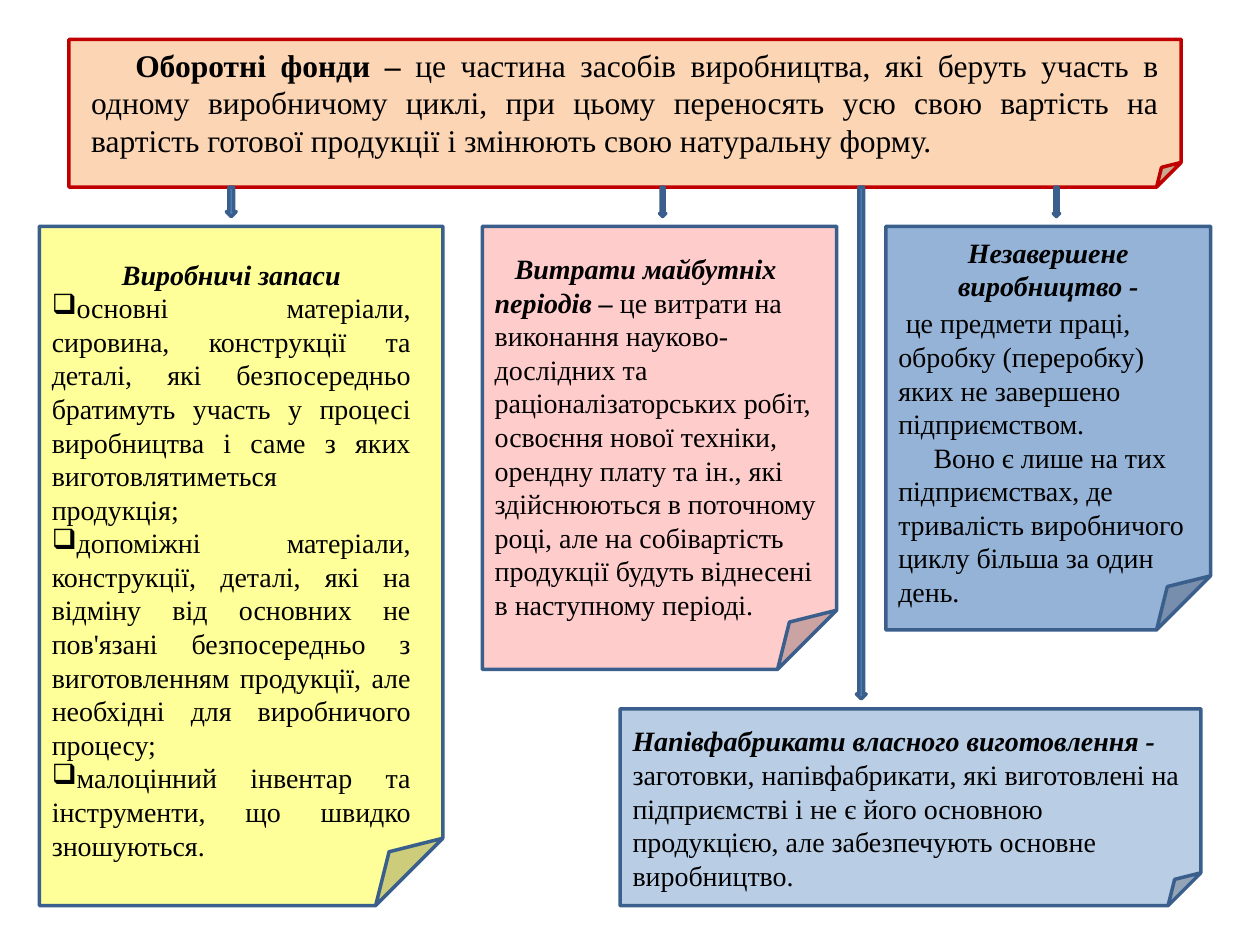
from dataclasses import dataclass

from lxml import etree
from pptx import Presentation
from pptx.dml.color import RGBColor
from pptx.enum import shapes, text
from pptx.oxml.ns import qn
from pptx.util import Emu, Inches, Pt

COLUMNS, ROWS = 128, 96
WIDTH, HEIGHT = Inches(10), Inches(7.5)
FONT = "Times New Roman"
BLUE_EDGE, RED_EDGE = "3A5F8C", "C00000"
LEFT, CENTER, JUSTIFY = text.PP_ALIGN.LEFT, text.PP_ALIGN.CENTER, text.PP_ALIGN.JUSTIFY


@dataclass(frozen=True)
class Area:
    column: float
    row: float
    columns: float
    rows: float

    def box(self) -> tuple[Emu, Emu, Emu, Emu]:
        across, down = WIDTH / COLUMNS, HEIGHT / ROWS
        return (Emu(round(self.column * across)), Emu(round(self.row * down)),
                Emu(round(self.columns * across)), Emu(round(self.rows * down)))


@dataclass(frozen=True)
class Passage:
    term: str = ""
    body: str = ""
    align: text.PP_ALIGN = LEFT
    indent: float = 0
    before: float = 0
    bullet: str = ""
    size: float = 16
    italic: bool = True


@dataclass(frozen=True)
class Note:
    area: Area
    fill: str
    edge: str = BLUE_EDGE
    top: float = 0.05
    passages: tuple[Passage, ...] = ()


@dataclass(frozen=True)
class Caption:
    area: Area
    passages: tuple[Passage, ...]


def color(value: str) -> RGBColor:
    return RGBColor.from_string(value)


def add_run(paragraph, words: str, size: float, bold: bool, italic: bool) -> None:
    run = paragraph.add_run()
    run.text = words
    run.font.name = FONT
    run.font.size = Pt(size)
    run.font.bold = bold
    run.font.italic = italic
    run.font.color.rgb = color("000000")


def write(frame, passages: tuple[Passage, ...], top: float = 0.05) -> None:
    frame.word_wrap = True
    frame.vertical_anchor = text.MSO_ANCHOR.TOP
    frame.margin_top = Inches(top)
    for index, passage in enumerate(passages):
        paragraph = frame.add_paragraph() if index else frame.paragraphs[0]
        paragraph.alignment = passage.align
        paragraph.space_before = Pt(passage.before)
        properties = paragraph._p.get_or_add_pPr()
        properties.set("marL", "0")
        properties.set("indent", str(Inches(passage.indent)))
        if passage.bullet:
            etree.SubElement(properties, qn("a:buChar")).set("char", passage.bullet)
        if passage.term:
            add_run(paragraph, passage.term, passage.size, True, passage.italic)
        if passage.body:
            add_run(paragraph, passage.body, passage.size, False, False)


def add_outlined(slide, kind: shapes.MSO_SHAPE, area: Area, fill: str, edge: str):
    shape = slide.shapes.add_shape(kind, *area.box())
    shape.shadow.inherit = False
    shape.fill.solid()
    shape.fill.fore_color.rgb = color(fill)
    shape.line.color.rgb = color(edge)
    shape.line.width = Pt(2)
    return shape


def add_note(slide, note: Note) -> None:
    shape = add_outlined(slide, shapes.MSO_SHAPE.FOLDED_CORNER, note.area, note.fill, note.edge)
    if note.passages:
        write(shape.text_frame, note.passages, note.top)


def add_caption(slide, caption: Caption) -> None:
    write(slide.shapes.add_textbox(*caption.area.box()).text_frame, caption.passages)


def add_arrow(slide, area: Area) -> None:
    add_outlined(slide, shapes.MSO_SHAPE.DOWN_ARROW, area, "4F81BD", BLUE_EDGE)


NOTES = (
    Note(Area(4, 23, 41, 69), "FFFF99"),
    Note(Area(7, 4, 113, 15), "FCD5B5", RED_EDGE),
    Note(Area(63, 72, 59, 20), "B9CDE5", top=0.12, passages=(
        Passage("Напівфабрикати власного виготовлення - ",
                "заготовки, напівфабрикати, які виготовлені на підприємстві і не є його "
                "основною продукцією, але забезпечують основне виробництво."),
    )),
    Note(Area(49, 23, 36, 45), "FFCCCC", top=0.2, passages=(
        Passage("Витрати майбутніх періодів – ",
                "це витрати на виконання науково-дослідних та раціоналізаторських робіт, "
                "освоєння нової техніки, орендну плату та ін., які здійснюються в поточному "
                "році, але на собівартість продукції будуть віднесені в наступному періоді.",
                indent=0.16),
    )),
    Note(Area(90, 23, 33, 41), "95B3D7", top=0.07, passages=(
        Passage("Незавершене виробництво -", align=CENTER),
        Passage(body="це предмети праці, обробку (переробку) яких не завершено підприємством.",
                indent=0.06, before=2),
        Passage(body="Воно є лише на тих підприємствах, де тривалість виробничого циклу "
                     "більша за один день.", indent=0.28),
    )),
)

SUPPLIES = (
    "основні матеріали, сировина, конструкції та деталі, які безпосередньо братимуть "
    "участь у процесі виробництва і саме з яких виготовлятиметься продукція;",
    "допоміжні матеріали, конструкції, деталі, які на відміну від основних не пов'язані "
    "безпосередньо з виготовленням продукції, але необхідні для виробничого процесу;",
    "малоцінний інвентар та інструменти, що швидко зношуються.",
)

CAPTIONS = (
    Caption(Area(8, 4, 111, 13), (
        Passage("Оборотні фонди – ",
                "це частина засобів виробництва, які беруть участь в одному виробничому циклі, "
                "при цьому переносять усю свою вартість на вартість готової продукції і "
                "змінюють свою натуральну форму.",
                JUSTIFY, indent=0.35, size=18, italic=False),
    )),
    Caption(Area(4, 25.5, 39, 64), (
        Passage("Виробничі запаси", align=CENTER),
        *(Passage(body=supply, align=JUSTIFY, bullet="❑") for supply in SUPPLIES),
    )),
)

ARROWS = (
    Area(23, 19, 1, 3),
    Area(67, 19, 0.64, 3),
    Area(107, 19, 0.64, 3),
    Area(87, 19, 1, 52),
)


def main() -> None:
    deck = Presentation()
    deck.slide_width, deck.slide_height = WIDTH, HEIGHT
    slide = deck.slides.add_slide(deck.slide_layouts[6])
    for note in NOTES:
        add_note(slide, note)
    for caption in CAPTIONS:
        add_caption(slide, caption)
    for arrow in ARROWS:
        add_arrow(slide, arrow)
    deck.save("out.pptx")


if __name__ == "__main__":
    main()
